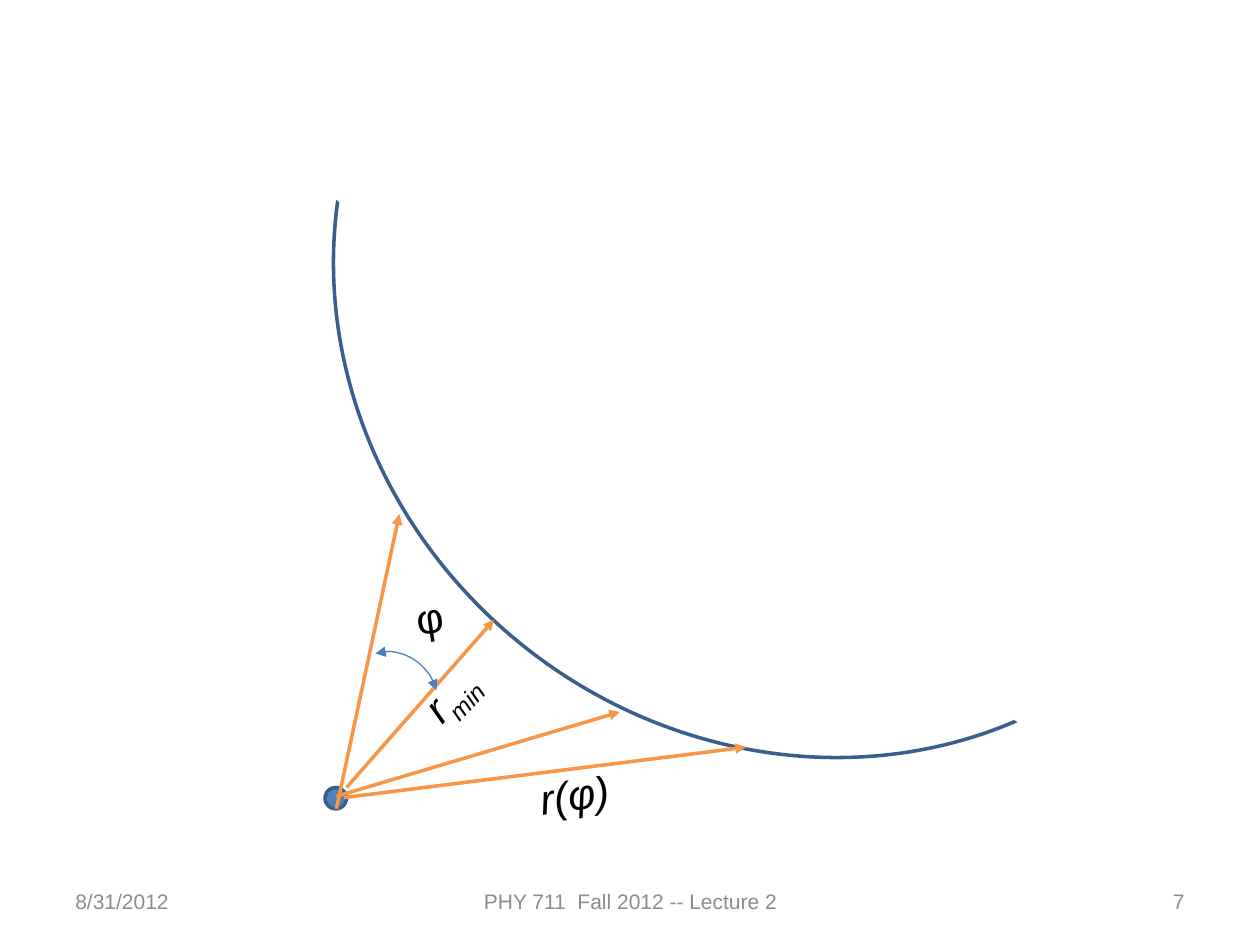
from lxml.etree import SubElement
from pptx import Presentation
from pptx.dml.color import RGBColor
from pptx.enum.shapes import MSO_CONNECTOR, MSO_SHAPE
from pptx.enum.text import MSO_ANCHOR, MSO_AUTO_SIZE, PP_ALIGN
from pptx.oxml.ns import qn
from pptx.util import Inches, Pt

COLORS = {
    "blue": "4F81BD",
    "outline": "3A5F8C",
    "angle": "4B7EBC",
    "orange": "F79646",
    "gray": "8C8C8C",
    "black": "000000",
    "white": "FFFFFF",
}


def add_text(place, runs, rotation=0, align=PP_ALIGN.LEFT, anchor=MSO_ANCHOR.TOP,
             fit=MSO_AUTO_SIZE.NONE, size=24, color="black", italic=False):
    box = page.shapes.add_textbox(*map(Inches, place))
    box.rotation = rotation
    frame = box.text_frame
    frame.word_wrap = True
    frame.auto_size = fit
    frame.vertical_anchor = anchor
    para = frame.paragraphs[0]
    para.alignment = align
    for text, baseline in runs:
        span = para.add_run()
        span.text = text
        formats = {"name": "Arial", "size": Pt(size), "italic": italic}
        for name, value in formats.items():
            setattr(span.font, name, value)
        span.font.color.rgb = RGBColor.from_string(COLORS[color])
        if baseline:
            span._r.get_or_add_rPr().set("baseline", str(baseline))


def set_line(shape, color, width, arrowheads=()):
    shape.line.color.rgb = RGBColor.from_string(COLORS[color])
    shape.line.width = Pt(width)
    for end in arrowheads:
        SubElement(shape.line._get_or_add_ln(), qn(f"a:{end}"), type="triangle")


deck = Presentation()
deck.slide_width, deck.slide_height = Inches(10), Inches(7.5)
page = deck.slides.add_slide(deck.slide_layouts[6])

footers = [
    (0.5, 2.33, "8/31/2012", PP_ALIGN.LEFT),
    (3.42, 3.17, "PHY 711  Fall 2012 -- Lecture 2", PP_ALIGN.CENTER),
    (7.17, 2.33, "7", PP_ALIGN.RIGHT),
]
for left, width, text, align in footers:
    add_text((left, 6.95, width, 0.4), [(text, 0)], align=align,
             anchor=MSO_ANCHOR.MIDDLE, size=12, color="gray")

trajectory = page.shapes.add_shape(
    MSO_SHAPE.BLOCK_ARC, Inches(2.54), Inches(-1.19), Inches(7.65), Inches(7.09))
trajectory.rotation = 218.7
for index, value in enumerate((105.7, 0.7, 0)):
    trajectory.adjustments[index] = value
center = page.shapes.add_shape(
    MSO_SHAPE.OVAL, Inches(2.58), Inches(6.25), Inches(0.17), Inches(0.17))
for shape in (trajectory, center):
    shape.shadow.inherit = False
    shape.fill.solid()
    shape.fill.fore_color.rgb = RGBColor.from_string(COLORS["blue"])
    set_line(shape, "outline", 2)

radii = [
    (2.75, 6.25, 3.92, 4.92),
    (2.67, 6.32, 4.92, 5.65),
    (2.73, 6.33, 5.92, 5.93),
    (2.67, 6.42, 3.17, 4.08),
]
for ends in radii:
    radius = page.shapes.add_connector(MSO_CONNECTOR.STRAIGHT, *map(Inches, ends))
    set_line(radius, "orange", 2, ["tailEnd"])
    SubElement(radius._element.spPr, qn("a:effectLst"))

labels = [
    ((3.15, 5.02, 1.29, 0.5), [("r", 0), ("min", -25000)], 313.9, True),
    ((4.18, 6.01, 1.29, 0.5), [("r(φ)", 0)], 351.3, True),
    ((3.2, 4.63, 0.6, 0.5), [("φ", 0)], 351.6, False),
]
for place, runs, rotation, italic in labels:
    add_text(place, runs, rotation, fit=MSO_AUTO_SIZE.SHAPE_TO_FIT_TEXT, italic=italic)

angle = page.shapes.add_shape(
    MSO_SHAPE.ARC, Inches(2.71), Inches(5.17), Inches(0.77), Inches(0.83))
angle.rotation = 343.8
angle.shadow.inherit = False
angle.fill.background()
set_line(angle, "angle", 0.75, ["headEnd", "tailEnd"])

cover = page.shapes.add_shape(
    MSO_SHAPE.RECTANGLE, Inches(2.33), Inches(1.17), Inches(8.67), Inches(3.08))
cover.rotation = 37.5
cover.shadow.inherit = False
cover.fill.solid()
cover.fill.fore_color.rgb = RGBColor.from_string(COLORS["white"])
cover.line.fill.background()

deck.save("out.pptx")
